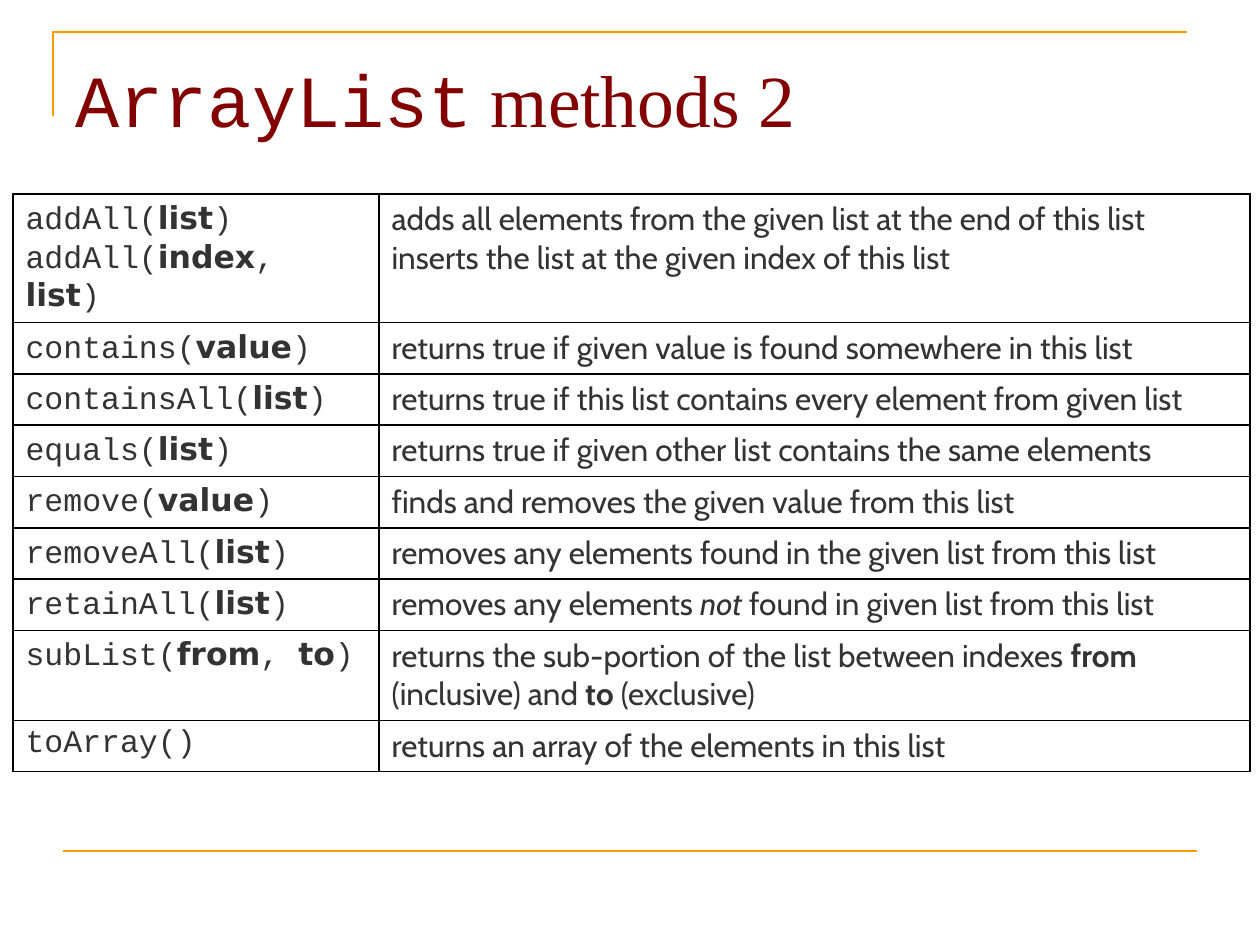
from lxml.etree import SubElement
from pptx import Presentation
from pptx.dml.color import RGBColor
from pptx.enum.shapes import MSO_CONNECTOR as Connector
from pptx.enum.text import MSO_ANCHOR as Anchor, MSO_AUTO_SIZE as AutoSize, PP_ALIGN as Align
from pptx.oxml.ns import qn
from pptx.util import Emu, Pt

EMU_PER_PX = 914400 / 126
ORANGE, MAROON, GRAY, BLACK = "FF9900", "820000", "333333", "000000"
CODE, PARAMETER, PROSE, SERIF = "Courier New", "DejaVu Sans", "Cabin", "Times New Roman"
ROW_HEIGHT = 51

# (signatures, descriptions, row height); *bold* and _italic_ mark emphasis
METHODS = [
    (["addAll(*list*)", "addAll(*index*, *list*)"],
     ["adds all elements from the given list at the end of this list",
      "inserts the list at the given index of this list"], 128),
    (["contains(*value*)"],
     ["returns true if given value is found somewhere in this list"], ROW_HEIGHT),
    (["containsAll(*list*)"],
     ["returns true if this list contains every element from given list"], ROW_HEIGHT),
    (["equals(*list*)"],
     ["returns true if given other list contains the same elements"], ROW_HEIGHT),
    (["remove(*value*)"],
     ["finds and removes the given value from this list"], ROW_HEIGHT),
    (["removeAll(*list*)"],
     ["removes any elements found in the given list from this list"], ROW_HEIGHT),
    (["retainAll(*list*)"],
     ["removes any elements _not_ found in given list from this list"], ROW_HEIGHT),
    (["subList(*from*, *to*)"],
     ["returns the sub-portion of the list between indexes *from *"
      "(inclusive) and *to *(exclusive)"], 90),
    (["toArray()"],
     ["returns an array of the elements in this list"], ROW_HEIGHT),
]


def px(length):
    return Emu(round(length * EMU_PER_PX))


def color(value):
    return RGBColor.from_string(value)


def add_text(paragraph, text, font, size=18, fill=GRAY, bold=False, italic=False):
    run = paragraph.add_run()
    run.text = text
    run.font.name = font
    run.font.size = Pt(size)
    run.font.bold = bold
    run.font.italic = italic
    run.font.color.rgb = color(fill)


def add_marked_text(paragraph, text, font, bold_font):
    for i, part in enumerate(text.split("*")):
        bold = i % 2 == 1
        for j, piece in enumerate(part.split("_")):
            if piece:
                add_text(paragraph, piece, bold_font if bold else font,
                         bold=bold, italic=j % 2 == 1)


def style_line(line):
    line.color.rgb = color(ORANGE)
    line.width = Pt(1.5)


def add_frame(slide):
    # Corner line above the title
    builder = slide.shapes.build_freeform(53, 116, scale=EMU_PER_PX)
    builder.add_line_segments([(53, 32), (1187, 32)], close=False)
    corner = builder.convert_to_shape()
    corner.shadow.inherit = False
    corner.fill.background()
    style_line(corner.line)

    # Footer rule
    rule = slide.shapes.add_connector(Connector.STRAIGHT, px(63), px(851), px(1197), px(851))
    SubElement(rule.element.spPr, qn("a:effectLst"))
    style_line(rule.line)


def add_title(slide):
    title = slide.shapes.title
    title.left, title.top, title.width, title.height = px(63), px(38), px(1134), px(130)
    frame = title.text_frame
    frame.auto_size = AutoSize.NONE
    frame.vertical_anchor = Anchor.MIDDLE
    frame.margin_bottom = px(17)
    paragraph = frame.paragraphs[0]
    paragraph.alignment = Align.LEFT
    add_text(paragraph, "ArrayList", CODE, size=42, fill=MAROON)
    add_text(paragraph, " methods 2", SERIF, size=42, fill=MAROON)


def add_borders(cell):
    properties = cell._tc.get_or_add_tcPr()
    for side in ("lnL", "lnR", "lnT", "lnB"):
        line = SubElement(properties, qn(f"a:{side}"), w=str(Pt(1)))
        fill = SubElement(line, qn("a:solidFill"))
        SubElement(fill, qn("a:srgbClr"), val=BLACK)


def fill_cell(cell, lines, font, bold_font):
    add_borders(cell)
    cell.fill.background()
    frame = cell.text_frame
    for i, line in enumerate(lines):
        paragraph = frame.add_paragraph() if i else frame.paragraphs[0]
        add_marked_text(paragraph, line, font, bold_font)


def add_method_table(slide):
    widths = (366, 871)
    height = sum(row_height for _, _, row_height in METHODS)
    table = slide.shapes.add_table(len(METHODS), len(widths), px(13), px(194),
                                   px(sum(widths)), px(height)).table
    table.first_row = table.horz_banding = False
    for column, width in zip(table.columns, widths):
        column.width = px(width)
    for row, (signatures, descriptions, row_height) in zip(table.rows, METHODS):
        row.height = px(row_height)
        fill_cell(row.cells[0], signatures, CODE, PARAMETER)
        fill_cell(row.cells[1], descriptions, PROSE, PROSE)


def main():
    presentation = Presentation()
    presentation.slide_width, presentation.slide_height = px(1260), px(945)
    slide = presentation.slides.add_slide(presentation.slide_layouts[5])
    add_frame(slide)
    add_title(slide)
    add_method_table(slide)
    presentation.save("out.pptx")


if __name__ == "__main__":
    main()
